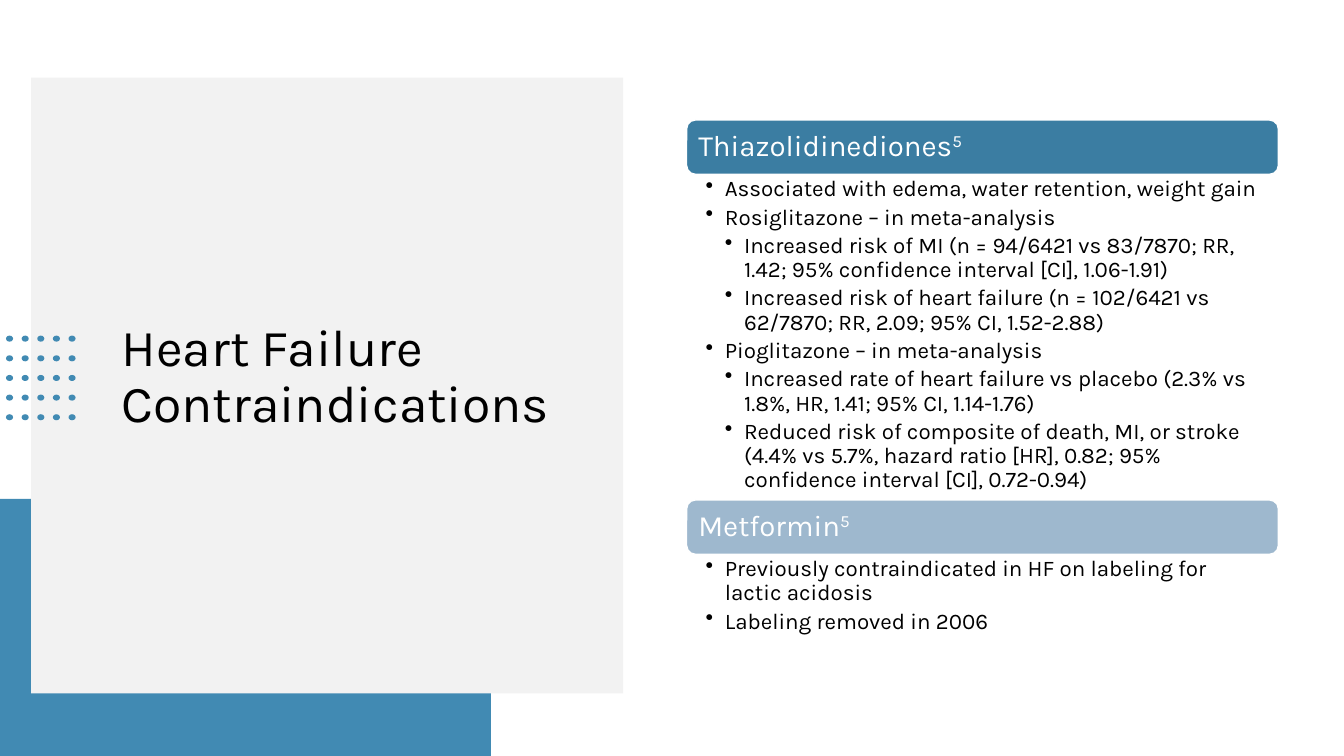
import pptx
import pptx.dml.color
import pptx.enum.shapes
import pptx.enum.text
import pptx.oxml.ns
import pptx.util
from lxml import etree
from pptx.util import Inches

RGBColor = pptx.dml.color.RGBColor
MSO_SHAPE = pptx.enum.shapes.MSO_SHAPE
MIDDLE = pptx.enum.text.MSO_ANCHOR.MIDDLE

BLUE = RGBColor(0x41, 0x8A, 0xB3)
DEEP_BLUE = RGBColor(0x3B, 0x7D, 0xA2)
PALE_BLUE = RGBColor(0x9E, 0xB8, 0xCE)
GREY = RGBColor(0xF2, 0xF2, 0xF2)
WHITE = RGBColor(0xFF, 0xFF, 0xFF)
BLACK = RGBColor(0, 0, 0)

# Drug class, reference, banner colour, banner top, list height, (level, text)
SECTIONS = [
    ("Thiazolidinediones", "5", DEEP_BLUE, 1.19, 3.23, [
        (1, "Associated with edema, water retention, weight gain"),
        (1, "Rosiglitazone – in meta-analysis"),
        (2, "Increased risk of MI (n = 94/6421 vs 83/7870; RR, 1.42; "
            "95% confidence interval [CI], 1.06-1.91)"),
        (2, "Increased risk of heart failure (n = 102/6421 vs 62/7870; "
            "RR, 2.09; 95% CI, 1.52-2.88)"),
        (1, "Pioglitazone – in meta-analysis"),
        (2, "Increased rate of heart failure vs placebo (2.3% vs 1.8%, "
            "HR, 1.41; 95% CI, 1.14-1.76)"),
        (2, "Reduced risk of composite of death, MI, or stroke (4.4% vs 5.7%, "
            "hazard ratio [HR], 0.82; 95% confidence interval [CI], 0.72-0.94)"),
    ]),
    ("Metformin", "5", PALE_BLUE, 4.96, 0.81, [
        (1, "Previously contraindicated in HF on labeling for lactic acidosis"),
        (1, "Labeling removed in 2006"),
    ]),
]
SECTION_LEFT, SECTION_WIDTH, BANNER_HEIGHT = 6.81, 5.87, 0.54
INDENT = 0.19

presentation = pptx.Presentation()
presentation.slide_width = Inches(13.33)
presentation.slide_height = Inches(7.5)
slide = presentation.slides.add_slide(presentation.slide_layouts[6])


def add_filled(kind, left, top, width, height, color):
    shape = slide.shapes.add_shape(
        kind, Inches(left), Inches(top), Inches(width), Inches(height))
    shape.shadow.inherit = False
    shape.fill.solid()
    shape.fill.fore_color.rgb = color
    shape.line.fill.background()
    return shape


def style_paragraph(paragraph, size, color):
    paragraph.line_spacing = 0.9
    paragraph.alignment = pptx.enum.text.PP_ALIGN.LEFT
    paragraph.font.name = "Karla"
    paragraph.font.size = pptx.util.Pt(size)
    paragraph.font.color.rgb = color


# Background panels
add_filled(MSO_SHAPE.RECTANGLE, 0, 4.95, 4.87, 2.55, BLUE)
add_filled(MSO_SHAPE.RECTANGLE, 0.31, 0.77, 5.87, 6.11, GREY)

# Title
title = slide.shapes.add_textbox(
    Inches(1.11), Inches(1.47), Inches(4.59), Inches(4.56)).text_frame
title.word_wrap = True
title.vertical_anchor = MIDDLE
title.text = "Heart Failure Contraindications"
style_paragraph(title.paragraphs[0], 37, BLACK)

# Dot grid
for column in range(5):
    for row in range(5):
        add_filled(MSO_SHAPE.OVAL, 0.06 + 0.155 * column, 3.33 + 0.195 * row,
                   0.07, 0.06, BLUE)

# Drug sections
for drug, reference, color, top, list_height, findings in SECTIONS:
    # Banner with superscript reference
    banner = add_filled(MSO_SHAPE.ROUNDED_RECTANGLE, SECTION_LEFT, top,
                        SECTION_WIDTH, BANNER_HEIGHT, color)
    banner.line.color.rgb = WHITE
    banner.line.width = pptx.util.Pt(1)
    heading = banner.text_frame
    heading.margin_left = heading.margin_right = Inches(0.09)
    heading.margin_top = heading.margin_bottom = Inches(0.09)
    heading.vertical_anchor = MIDDLE
    heading_line = heading.paragraphs[0]
    heading_line.add_run().text = drug
    citation = heading_line.add_run()
    citation.text = reference
    citation.font._element.set("baseline", "30000")
    style_paragraph(heading_line, 21, WHITE)

    # Bulleted findings
    finding_list = slide.shapes.add_textbox(
        Inches(SECTION_LEFT), Inches(top + BANNER_HEIGHT),
        Inches(SECTION_WIDTH), Inches(list_height)).text_frame
    finding_list.word_wrap = True
    finding_list.margin_left = Inches(0.19)
    finding_list.margin_right = Inches(0.16)
    finding_list.margin_top = finding_list.margin_bottom = Inches(0.03)
    for index, (level, text) in enumerate(findings):
        finding = finding_list.add_paragraph() if index else finding_list.paragraphs[0]
        finding.text = text
        finding.level = level
        finding.space_after = pptx.util.Pt(3)
        properties = finding._p.get_or_add_pPr()
        properties.set("marL", str(Inches(INDENT * level)))
        properties.set("indent", str(-Inches(INDENT)))
        bullet = etree.SubElement(properties, pptx.oxml.ns.qn("a:buChar"))
        bullet.set("char", "•")
        style_paragraph(finding, 16, BLACK)

presentation.save("out.pptx")
